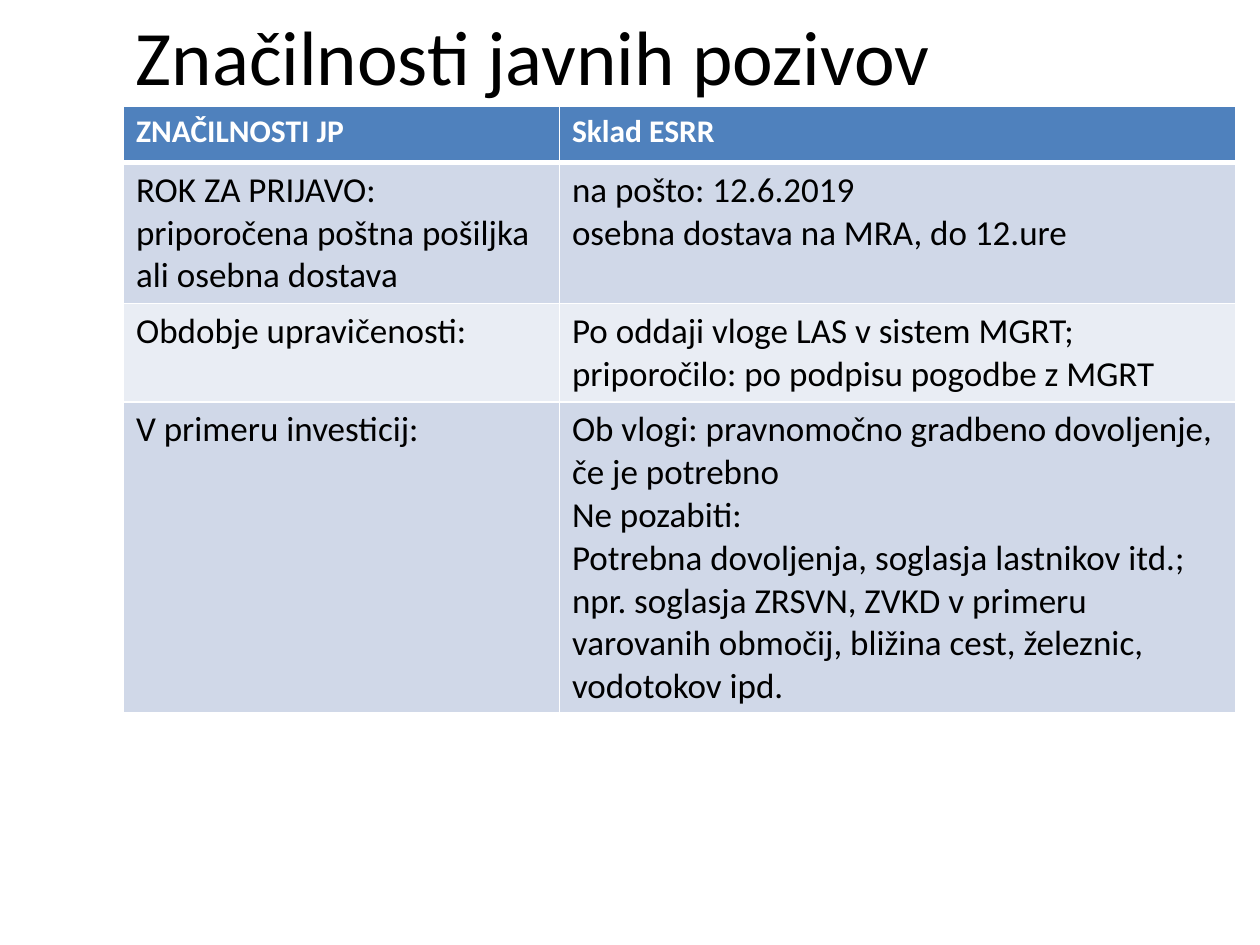
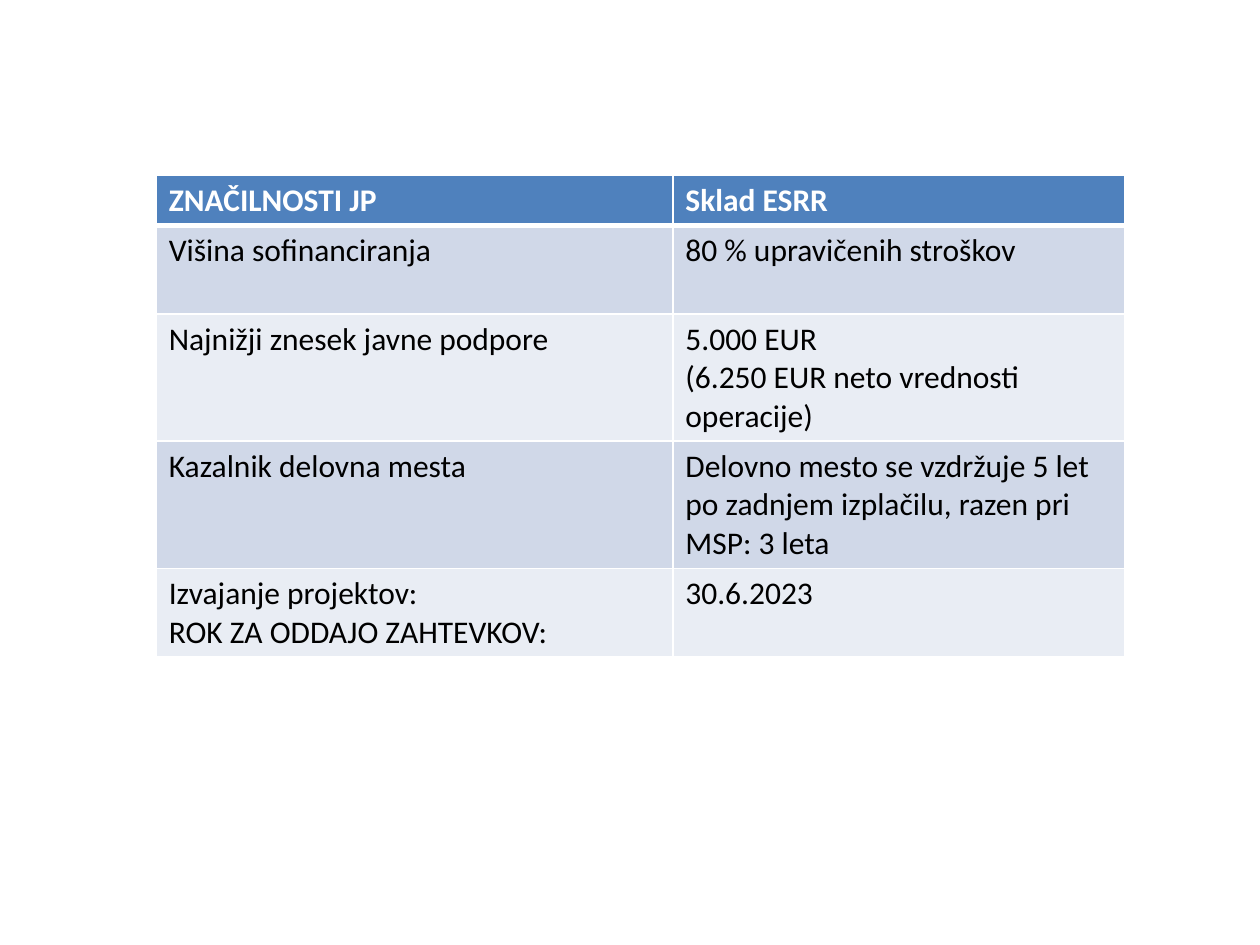
from lxml import etree
from pptx import Presentation
from pptx.dml.color import RGBColor
from pptx.enum.text import MSO_ANCHOR
from pptx.oxml.ns import qn
from pptx.util import Inches, Pt

MIDDLE = MSO_ANCHOR.MIDDLE
FONT = "Calibri"
COLORS = {
    "text": "000000",
    "header": "4F81BD",
    "header_text": "FFFFFF",
    "odd_row": "D0D8E8",
    "even_row": "E9EDF4",
    "border": "FFFFFF",
}
HEADER = (["ZNAČILNOSTI JP"], ["Sklad ESRR"])

# Each cell is a list of paragraphs.
SLIDES = [
    {
        "title": "Značilnosti javnih pozivov",
        "position": (0.98, 0.84),
        "columns": (3.46, 5.37),
        "heights": (0.45, 1.12, 0.78, 2.47),
        "body_size": 20,
        "rows": [
            (["ROK ZA PRIJAVO: priporočena poštna pošiljka ali osebna dostava"],
             ["na pošto: 12.6.2019", "osebna dostava na MRA, do 12.ure"]),
            (["Obdobje upravičenosti:"],
             ["Po oddaji vloge LAS v sistem MGRT; "
              "priporočilo: po podpisu pogodbe z MGRT"]),
            (["V primeru investicij:"],
             ["Ob vlogi: pravnomočno gradbeno dovoljenje, če je potrebno",
              "Ne pozabiti:",
              "Potrebna dovoljenja, soglasja lastnikov itd.; npr. soglasja "
              "ZRSVN, ZVKD v primeru varovanih območij, bližina cest, "
              "železnic, vodotokov ipd."]),
        ],
    },
    {
        "title": None,
        "position": (1.24, 1.39),
        "columns": (4.1, 3.59),
        "heights": (0.4, 0.7, 1.01, 1.01, 0.7),
        "body_size": 18,
        "rows": [
            (["Višina sofinanciranja"], ["80 % upravičenih stroškov"]),
            (["Najnižji znesek javne podpore"],
             ["5.000 EUR", "(6.250 EUR neto vrednosti operacije)"]),
            (["Kazalnik delovna mesta"],
             ["Delovno mesto se vzdržuje 5 let po zadnjem izplačilu, "
              "razen pri MSP: 3 leta"]),
            (["Izvajanje projektov:", "ROK ZA ODDAJO ZAHTEVKOV:"],
             ["30.6.2023"]),
        ],
    },
]


def write_text(frame, paragraphs, size, color="text", bold=False):
    for index, text in enumerate(paragraphs):
        paragraph = frame.paragraphs[0] if index == 0 else frame.add_paragraph()
        run = paragraph.add_run()
        run.text = text
        run.font.name = FONT
        run.font.size = Pt(size)
        run.font.bold = bold
        run.font.color.rgb = RGBColor.from_string(COLORS[color])


def set_borders(cell, widths):
    """Draw cell borders; widths maps a side (L, R, T, B) to points."""
    properties = cell._tc.get_or_add_tcPr()
    for index, (side, width) in enumerate(widths.items()):
        line = etree.Element(qn(f"a:ln{side}"), w=str(Pt(width)))
        fill = etree.SubElement(line, qn("a:solidFill"))
        etree.SubElement(fill, qn("a:srgbClr"), val=COLORS["border"])
        properties.insert(index, line)


def add_title(slide, text):
    box = slide.shapes.add_textbox(
        Inches(0.98), Inches(-0.19), Inches(8.83), Inches(1.25))
    box.text_frame.word_wrap = True
    box.text_frame.vertical_anchor = MIDDLE
    write_text(box.text_frame, [text], size=44)


def add_feature_table(slide, content):
    rows = [HEADER] + content["rows"]
    columns, heights = content["columns"], content["heights"]
    left, top = content["position"]
    table = slide.shapes.add_table(
        len(rows), len(columns), Inches(left), Inches(top),
        Inches(sum(columns)), Inches(sum(heights))).table
    for column, width in zip(table.columns, columns):
        column.width = Inches(width)
    for row, height in zip(table.rows, heights):
        row.height = Inches(height)

    for row_index, row in enumerate(rows):
        is_header = row_index == 0
        band = "odd_row" if row_index % 2 else "even_row"
        for column_index, paragraphs in enumerate(row):
            cell = table.cell(row_index, column_index)
            cell.fill.solid()
            cell.fill.fore_color.rgb = RGBColor.from_string(
                COLORS["header" if is_header else band])
            if is_header:
                write_text(cell.text_frame, paragraphs, size=18,
                           color="header_text", bold=True)
                set_borders(cell, {"L": 1, "R": 1, "T": 1, "B": 3})
            else:
                write_text(cell.text_frame, paragraphs, size=content["body_size"])
                top_width = 3 if row_index == 1 else 1
                set_borders(cell, {"L": 1, "R": 1, "T": top_width, "B": 1})


def main():
    presentation = Presentation()
    presentation.slide_width = Inches(10)
    presentation.slide_height = Inches(7.5)
    blank_layout = presentation.slide_layouts[6]
    for content in SLIDES:
        slide = presentation.slides.add_slide(blank_layout)
        if content["title"]:
            add_title(slide, content["title"])
        add_feature_table(slide, content)
    presentation.save("out.pptx")


if __name__ == "__main__":
    main()
